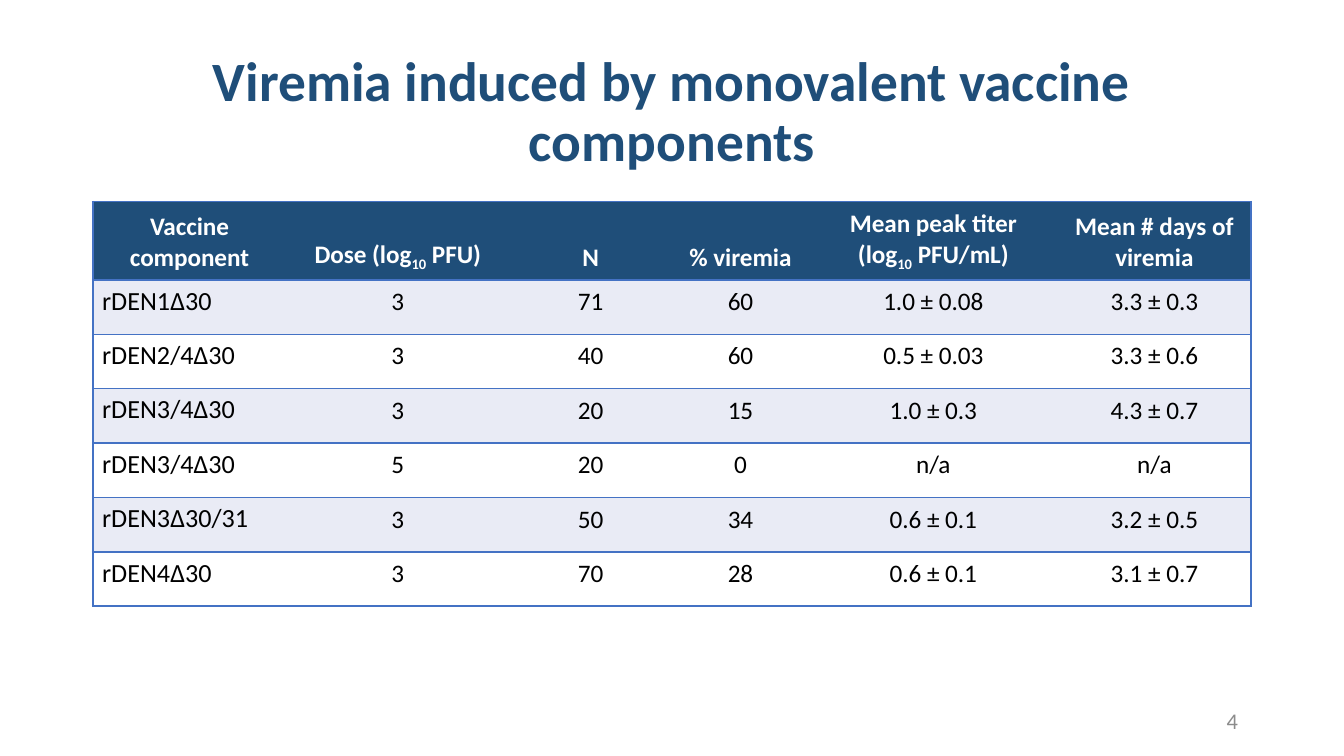
import pptx
import pptx.util
import pptx.dml.color
import pptx.enum.text
import pptx.oxml.ns
import lxml.etree

Inches, Pt = pptx.util.Inches, pptx.util.Pt
Align = pptx.enum.text.PP_ALIGN
Anchor = pptx.enum.text.MSO_ANCHOR
theme = {
    "font": "Calibri",
    "navy": "1F4E79", "rule": "4472C4", "band": "E9EBF5",
    "white": "FFFFFF", "black": "000000", "gray": "8C8C8C",
    "title": 29.7, "name": 14, "cell": 13.5, "page": 12,
}


def write(para, text, size, color, bold=False, align=Align.CENTER):
    """Fill a paragraph; text between underscores is set as subscript."""
    para.alignment = align
    look = {"name": theme["font"], "size": Pt(theme[size]), "bold": bold}
    for i, part in enumerate(text.split("_")):
        run = para.add_run()
        run.text = part
        for key, value in look.items():
            setattr(run.font, key, value)
        run.font.color.rgb = pptx.dml.color.RGBColor.from_string(theme[color])
        if i % 2:
            run._r.get_or_add_rPr().set("baseline", "-25000")


def border(cell, sides):
    """Draw thin rules on the given sides, in the order L, R, T, B."""
    props = cell._tc.get_or_add_tcPr()
    for side in sides:
        line = lxml.etree.SubElement(props, pptx.oxml.ns.qn("a:ln" + side), w=str(Pt(1)))
        fill = lxml.etree.SubElement(line, pptx.oxml.ns.qn("a:solidFill"))
        lxml.etree.SubElement(fill, pptx.oxml.ns.qn("a:srgbClr"), val=theme["rule"])


deck = pptx.Presentation()
deck.slide_width = Inches(10)
deck.slide_height = Inches(10) * 9 // 16
slide = deck.slides.add_slide(deck.slide_layouts[5])
left, width = Inches(0.69), Inches(8.62)

# Title
title = slide.shapes.title
place = {"left": left, "top": Inches(0.3), "width": width, "height": Inches(1.09)}
for key, value in place.items():
    setattr(title, key, value)
frame = title.text_frame
frame.word_wrap = True
frame.auto_size = pptx.enum.text.MSO_AUTO_SIZE.NONE
frame.vertical_anchor = Anchor.MIDDLE
frame.paragraphs[0].line_spacing = 0.9
write(frame.paragraphs[0], "Viremia induced by monovalent vaccine components",
      "title", "navy", True)

# Table
rows = [
    ["Vaccine component", "Dose (log_10_ PFU)", "N", "% viremia",
     "Mean peak titer (log_10_ PFU/mL)", "Mean # days of viremia"],
    ["rDEN1Δ30", "3", "71", "60", "1.0 ± 0.08", "3.3 ± 0.3"],
    ["rDEN2/4Δ30", "3", "40", "60", "0.5 ± 0.03", "3.3 ± 0.6"],
    ["rDEN3/4Δ30", "3", "20", "15", "1.0 ± 0.3", "4.3 ± 0.7"],
    ["rDEN3/4Δ30", "5", "20", "0", "n/a", "n/a"],
    ["rDEN3Δ30/31", "3", "50", "34", "0.6 ± 0.1", "3.2 ± 0.5"],
    ["rDEN4Δ30", "3", "70", "28", "0.6 ± 0.1", "3.1 ± 0.7"],
]
widths = [1.44, 1.66, 1.21, 1.02, 1.85, 1.44]
high, head = Inches(3.01), Inches(0.58)
table = slide.shapes.add_table(len(rows), len(widths), left, Inches(1.5), width, high).table
style = table._tbl.tblPr.find(pptx.oxml.ns.qn("a:tableStyleId"))
style.text = "{2D5ABB26-0587-4C30-8999-92F81FD0307C}"  # no style, no grid
table.horz_banding = False
for col, size in zip(table.columns, widths):
    col.width = Inches(size)

pads = {"margin_left": 0.07, "margin_right": 0.07, "margin_top": 0.04, "margin_bottom": 0.04}
last = len(widths) - 1
for r, row in enumerate(rows):
    table.rows[r].height = (high - head) // (len(rows) - 1) if r else head
    shade = "navy" if r == 0 else "band" if r % 2 else "white"
    for c, text in enumerate(row):
        cell = table.cell(r, c)
        border(cell, ("L" if c == 0 else "R" if c == last else "") + "TB")
        cell.fill.solid()
        cell.fill.fore_color.rgb = pptx.dml.color.RGBColor.from_string(theme[shade])
        para = cell.text_frame.paragraphs[0]
        if r == 0:
            cell.vertical_anchor = Anchor.BOTTOM
            write(para, text, "cell", "white", True)
        elif c == 0:
            for key, value in pads.items():
                setattr(cell, key, Inches(value))
            write(para, text, "name", "black", align=Align.LEFT)
        else:
            write(para, text, "cell", "black")

# Page number
page = slide.shapes.add_textbox(Inches(7.06), Inches(5.21), Inches(2.25), Inches(0.3))
page.text_frame.word_wrap = True
page.text_frame.vertical_anchor = Anchor.MIDDLE
write(page.text_frame.paragraphs[0], "4", "page", "gray", align=Align.RIGHT)

deck.save("out.pptx")
